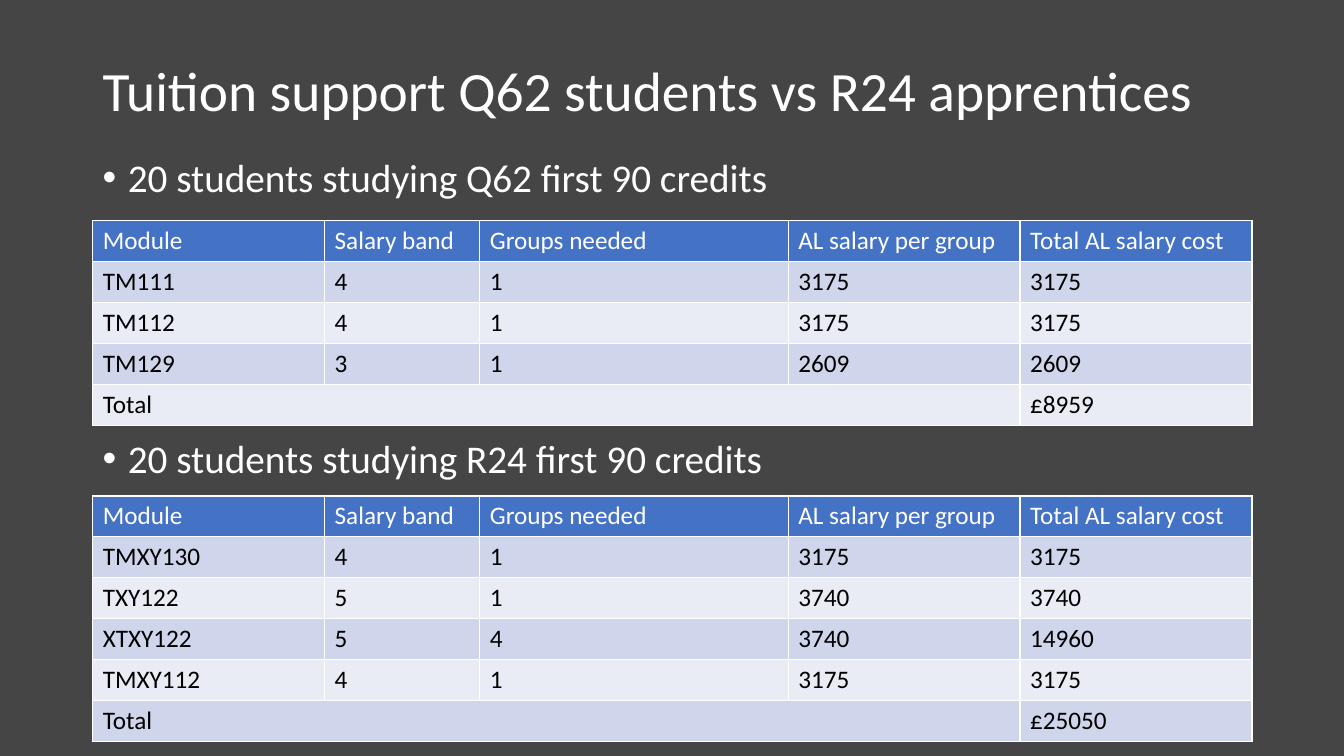
from pptx import Presentation
from pptx.dml.color import RGBColor
from pptx.enum.text import MSO_ANCHOR
from pptx.oxml.ns import qn
from pptx.util import Inches, Pt
from lxml import etree

MIDDLE, TOP = MSO_ANCHOR.MIDDLE, MSO_ANCHOR.TOP
WHITE, BLACK, HEADER_BLUE = "FFFFFF", "000000", "4472C4"
BANDS = ["CFD5EA", "E9EBF5"]
LEFT, WIDTH, ROW_HEIGHT = 0.92, 11.5, 0.406
COLUMN_WIDTHS = [2.3, 1.54, 3.06, 2.3, 2.3]
HEADINGS = ["Module", "Salary band", "Groups needed", "AL salary per group", "Total AL salary cost"]


def rgb(value):
    return RGBColor.from_string(value)


def write(paragraph, text, size, color):
    run = paragraph.add_run()
    run.text = text
    font_format = {"name": "Calibri", "size": Pt(size), "bold": False}
    for key, value in font_format.items():
        setattr(run.font, key, value)
    run.font.color.rgb = rgb(color)


presentation = Presentation()
presentation.slide_width = Inches(13.333)
presentation.slide_height = Inches(7.5)
slide = presentation.slides.add_slide(presentation.slide_layouts[6])
slide.background.fill.solid()
slide.background.fill.fore_color.rgb = rgb("454545")

# Title
title = slide.shapes.add_textbox(Inches(LEFT), Inches(0.4), Inches(WIDTH), Inches(1.06)).text_frame
title.word_wrap = True
title.vertical_anchor = MIDDLE
title.paragraphs[0].line_spacing = 0.9
write(title.paragraphs[0], "Tuition support Q62 students vs R24 apprentices", 39.6, WHITE)

# Bullets: the second one is spaced to clear the first table
student_groups = slide.shapes.add_textbox(Inches(LEFT), Inches(1.52), Inches(WIDTH), Inches(4.76)).text_frame
student_groups.word_wrap = True
student_groups.vertical_anchor = TOP
for number, (programme, gap) in enumerate([("Q62", 10), ("R24", 170.7)]):
    bullet = student_groups.add_paragraph() if number else student_groups.paragraphs[0]
    bullet.line_spacing = 0.9
    bullet.space_before = Pt(gap)
    properties = bullet._p.get_or_add_pPr()
    properties.set("marL", str(Inches(0.25)))
    properties.set("indent", str(Inches(-0.25)))
    etree.SubElement(properties, qn("a:buFont")).set("typeface", "Arial")
    etree.SubElement(properties, qn("a:buChar")).set("char", "•")
    write(bullet, f"20 students studying {programme} first 90 credits", 28, WHITE)

# Salary tables: top, modules as (name, band, groups, salary per group, total), grand total
salary_tables = [
    (2.19, [("TM111", 4, 1, 3175, 3175),
            ("TM112", 4, 1, 3175, 3175),
            ("TM129", 3, 1, 2609, 2609)], "£8959"),
    (4.92, [("TMXY130", 4, 1, 3175, 3175),
            ("TXY122", 5, 1, 3740, 3740),
            ("XTXY122", 5, 4, 3740, 14960),
            ("TMXY112", 4, 1, 3175, 3175)], "£25050"),
]
for top, modules, grand_total in salary_tables:
    rows = [HEADINGS, *modules, ("Total", "", "", "", grand_total)]
    table = slide.shapes.add_table(
        len(rows), len(HEADINGS), Inches(LEFT), Inches(top),
        Inches(WIDTH), Inches(ROW_HEIGHT * len(rows))).table
    for column, width in zip(table.columns, COLUMN_WIDTHS):
        column.width = Inches(width)
    for r, values in enumerate(rows):
        table.rows[r].height = Inches(ROW_HEIGHT)
        for c, value in enumerate(values):
            cell = table.cell(r, c)
            cell.fill.solid()
            cell.fill.fore_color.rgb = rgb(BANDS[(r - 1) % 2] if r else HEADER_BLUE)
            if value != "":
                write(cell.text_frame.paragraphs[0], str(value), 18, BLACK if r else WHITE)
    # The total label spans all but the last column
    last_row = len(rows) - 1
    table.cell(last_row, 0).merge(table.cell(last_row, 3))

presentation.save("out.pptx")
